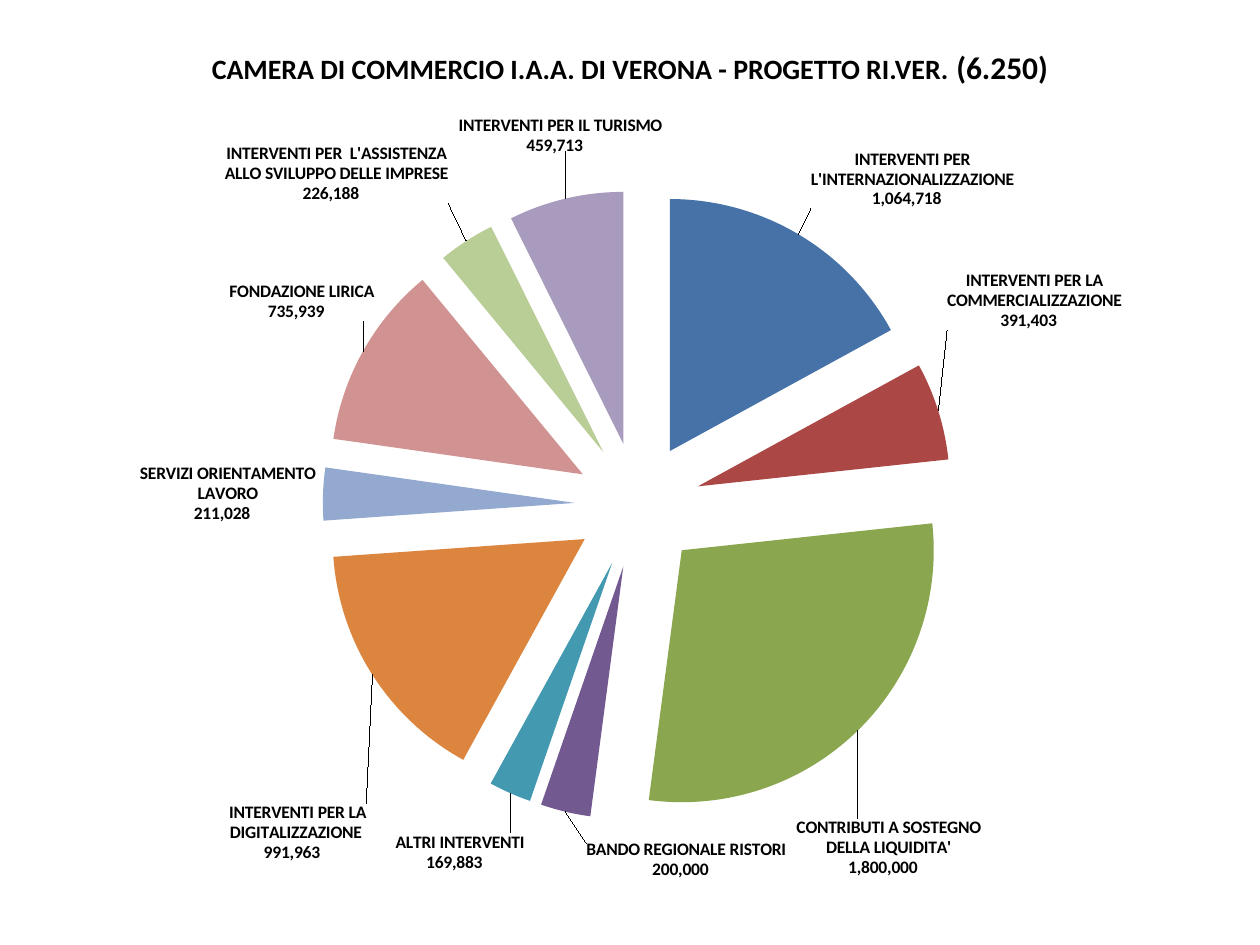
from copy import deepcopy

from lxml import etree
from pptx import Presentation
from pptx.chart.data import CategoryChartData
from pptx.dml.color import RGBColor
from pptx.enum.chart import XL_CHART_TYPE, XL_LABEL_POSITION
from pptx.enum.text import MSO_ANCHOR, PP_ALIGN
from pptx.oxml.ns import qn
from pptx.util import Pt

PIE = XL_CHART_TYPE.PIE_EXPLODED
OUTSIDE = XL_LABEL_POSITION.OUTSIDE_END
CENTER = PP_ALIGN.CENTER
MIDDLE = MSO_ANCHOR.MIDDLE

NUMBER_FORMAT = r'_-* #,##0\ _€_-;\-* #,##0\ _€_-;_-* "-"?'

# Category, value, slice colour, label shift in points (None: automatic place)
INTERVENTIONS = [
    ("INTERVENTI PER L'INTERNAZIONALIZZAZIONE", 1064718, "4672A8", (5, -11)),
    ("INTERVENTI PER LA COMMERCIALIZZAZIONE", 391403, "AB4744", (1, -45)),
    ("CONTRIBUTI A SOSTEGNO DELLA LIQUIDITA'", 1800000, "8AA64F", (-38, 47)),
    ("BANDO REGIONALE RISTORI", 200000, "725990", (127, 14)),
    ("ALTRI INTERVENTI", 169883, "4299B0", (10, 19)),
    ("INTERVENTI PER LA DIGITALIZZAZIONE ", 991963, "DC853E", (0, 71)),
    ("SERVIZI ORIENTAMENTO LAVORO", 211028, "93A9CF", None),
    ("FONDAZIONE LIRICA", 735939, "D19392", (10, -15)),
    ("INTERVENTI PER  L'ASSISTENZA ALLO SVILUPPO DELLE IMPRESE", 226188, "B9CD96", (-8, -18)),
    ("INTERVENTI PER IL TURISMO", 459713, "A99BBD", (56, -23)),
]


def color(hex_value):
    return RGBColor.from_string(hex_value)


def add_child(parent, tag, **attributes):
    return etree.SubElement(parent, qn(tag), attributes)


def add_layout(parent, **fractions):
    """Append a manual layout; values are fractions of the chart size."""
    manual = add_child(add_child(parent, "c:layout"), "c:manualLayout")
    if "w" in fractions:
        add_child(manual, "c:layoutTarget", val="inner")
        add_child(manual, "c:xMode", val="edge")
        add_child(manual, "c:yMode", val="edge")
    for name, value in fractions.items():
        add_child(manual, "c:" + name, val=f"{value:.4f}")


class SlideBuilder:
    font = "Calibri"
    text_color = "000000"

    def __init__(self, slide):
        self.slide = slide

    def style(self, font, size, bold=True):
        font.name = self.font
        font.size = Pt(size)
        font.bold = bold
        font.color.rgb = color(self.text_color)

    def title(self, left, top, width, height, runs):
        box = self.slide.shapes.add_textbox(Pt(left), Pt(top), Pt(width), Pt(height))
        frame = box.text_frame
        frame.word_wrap = True
        frame.vertical_anchor = MIDDLE
        paragraph = frame.paragraphs[0]
        paragraph.alignment = CENTER
        for text, size in runs:
            run = paragraph.add_run()
            run.text = text
            self.style(run.font, size)

    def pie(self, left, top, width, height, rows, plot_left, plot_top, diameter):
        data = CategoryChartData()
        data.categories = [row[0] for row in rows]
        data.add_series("Series 1", [row[1] for row in rows])
        chart = self.slide.shapes.add_chart(
            PIE, Pt(left), Pt(top), Pt(width), Pt(height), data).chart
        chart.has_title = False
        chart.has_legend = False
        self.style(chart.font, 10, bold=False)
        plot = chart.plots[0]
        plot.vary_by_categories = True
        series = plot.series[0]

        # Plot area
        plot_area = chart._chartSpace.chart.plotArea
        for old_layout in plot_area.findall(qn("c:layout")):
            plot_area.remove(old_layout)
        add_layout(plot_area, x=plot_left / width, y=plot_top / height,
                   w=diameter / width, h=diameter / height)
        plot_area.insert(0, plot_area[-1])

        # Slice colours
        for index, row in enumerate(rows):
            fill = series.points[index].format.fill
            fill.solid()
            fill.fore_color.rgb = color(row[2])

        # Labels shared by all slices
        labels = series.data_labels
        labels.show_value = True
        labels.show_category_name = True
        labels.number_format = NUMBER_FORMAT
        labels.number_format_is_linked = False
        labels.position = OUTSIDE
        self.style(labels.font, 10)
        element = labels._element
        for old_leader in element.findall(qn("c:showLeaderLines")):
            element.remove(old_leader)
        add_child(element, "c:separator").text = "\n"
        shared = list(element)
        add_child(element, "c:showLeaderLines", val="1")

        # Shifted labels
        shifted = [(index, row[3]) for index, row in enumerate(rows) if row[3]]
        for position, (index, (shift_x, shift_y)) in enumerate(shifted):
            label = add_child(element, "c:dLbl")
            add_child(label, "c:idx", val=str(index))
            add_layout(label, x=shift_x / width, y=shift_y / height)
            label.extend(deepcopy(shared))
            element.insert(position, label)


def main():
    presentation = Presentation()
    presentation.slide_width = Pt(720)
    presentation.slide_height = Pt(540)
    slide = presentation.slides.add_slide(presentation.slide_layouts[6])
    builder = SlideBuilder(slide)

    # Title
    builder.title(36, 21.6, 648, 33, [
        ("CAMERA DI COMMERCIO I.A.A. DI VERONA - PROGETTO RI.VER.", 16),
        (" (6.250)", 18),
    ])

    # Exploded pie of the interventions
    builder.pie(36, 66.24, 653, 436.3, INTERVENTIONS,
                plot_left=148.5, plot_top=42.5, diameter=360)

    presentation.save("out.pptx")


if __name__ == "__main__":
    main()
